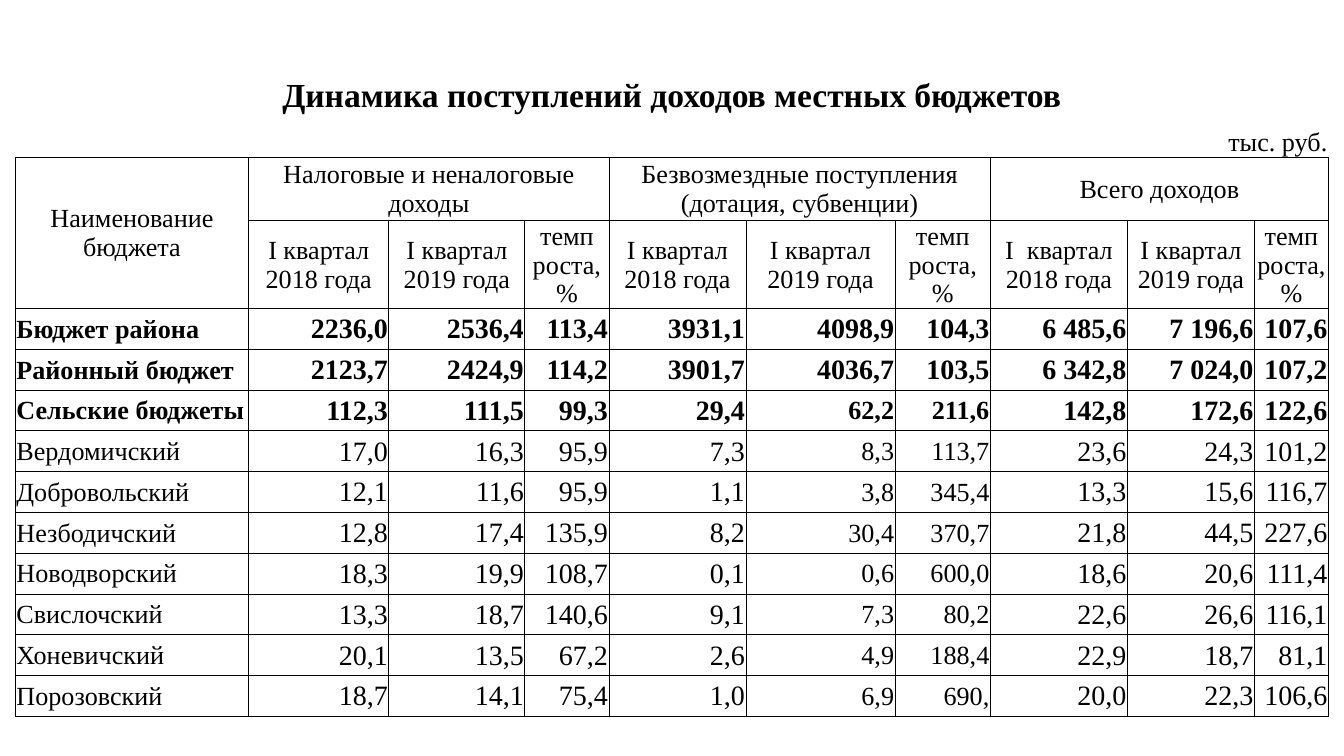
from dataclasses import dataclass
from lxml.etree import SubElement
from pptx import Presentation
from pptx.dml.color import RGBColor
from pptx.enum.text import MSO_ANCHOR, PP_ALIGN
from pptx.oxml.ns import qn
from pptx.util import Cm, Pt


@dataclass(frozen=True)
class Theme:
    font: str = "Times New Roman"
    ink: str = "000000"
    head: int = 18
    base: int = 14
    value: int = 15
    rule: float = 0.5


theme = Theme()
LEFT, MID, RIGHT = PP_ALIGN.LEFT, PP_ALIGN.CENTER, PP_ALIGN.RIGHT


def write(cell, text, size=theme.base, bold=False, align=MID, anchor=MSO_ANCHOR.MIDDLE):
    cell.vertical_anchor = anchor
    frame = cell.text_frame
    frame.text = text
    for para in frame.paragraphs:
        para.alignment = align
        for run in para.runs:
            run.font.name = theme.font
            run.font.size = Pt(size)
            run.font.bold = bold
            run.font.color.rgb = RGBColor.from_string(theme.ink)


def border(cell, drawn):
    props = cell._tc.get_or_add_tcPr()
    for side in "LRTB":
        line = SubElement(props, qn(f"a:ln{side}"), w=str(Pt(theme.rule)))
        if side in drawn:
            fill = SubElement(line, qn("a:solidFill"))
            SubElement(fill, qn("a:srgbClr"), val=theme.ink)
        else:
            SubElement(line, qn("a:noFill"))


deck = Presentation()
deck.slide_width, deck.slide_height = Cm(25.4), Cm(14.28)
slide = deck.slides.add_slide(deck.slide_layouts[6])

widths = [4.41, 2.65, 1.88, 0.69, 1.59, 2.26, 0.33, 2.82, 1.8, 1.85, 0.74, 1.53, 0.87, 1.4]
heights = [0.81] * 2 + [1.2] * 2 + [0.77] * 10
starts = [0, 1, 2, 4, 5, 7, 8, 9, 11, 13]
ends = [start - 1 for start in starts[1:]] + [13]

frame = slide.shapes.add_table(
    len(heights), len(widths), Cm(0.29), Cm(1.35), Cm(sum(widths)), Cm(sum(heights))
)
table = frame.table
table.first_row = table.horz_banding = False
for col, width in zip(table.columns, widths):
    col.width = Cm(width)
for index, (row, height) in enumerate(zip(table.rows, heights)):
    row.height = Cm(height)
    for cell in row.cells:
        cell.margin_left = cell.margin_right = cell.margin_top = Cm(0.02)
        cell.margin_bottom = 0
        border(cell, ["", "B"][index] if index < 2 else "LRTB")
        cell.fill.background()

spans = [(0, 0, 0, 13), (2, 0, 3, 0), (2, 1, 2, 4), (2, 5, 2, 8), (2, 9, 2, 13)]
spans += [(1, first, 1, last) for first, last in [(1, 2), (3, 5), (6, 8), (10, 11), (12, 13)]]
spans += [
    (row, first, row, last)
    for row in range(3, 14)
    for first, last in zip(starts, ends)
    if first < last
]
for top, first, end, last in spans:
    table.cell(top, first).merge(table.cell(end, last))

write(
    table.cell(0, 0), "Динамика поступлений доходов местных бюджетов",
    size=theme.head, bold=True, anchor=MSO_ANCHOR.BOTTOM,
)
write(table.cell(1, 12), "тыс. руб.", align=RIGHT, anchor=MSO_ANCHOR.BOTTOM)

groups = {
    0: "Наименование бюджета",
    1: "Налоговые и неналоговые доходы",
    5: "Безвозмездные поступления (дотация, субвенции)",
    9: "Всего доходов",
}
for col, text in groups.items():
    write(table.cell(2, col), text)

past, now, rate = "I квартал 2018 года", "I квартал\n2019 года", "темп\nроста, %"
heads = [past, now, rate, past, now, rate, "I  квартал\n2018 года", now, rate]
for col, text in zip(starts[1:], heads):
    write(table.cell(3, col), text)

data = [
    ("Бюджет района", "2236,0", "2536,4", "113,4", "3931,1", "4098,9", "104,3", "6 485,6", "7 196,6", "107,6"),
    ("Районный бюджет", "2123,7", "2424,9", "114,2", "3901,7", "4036,7", "103,5", "6 342,8", "7 024,0", "107,2"),
    ("Сельские бюджеты", "112,3", "111,5", "99,3", "29,4", "62,2", "211,6", "142,8", "172,6", "122,6"),
    ("Вердомичский", "17,0", "16,3", "95,9", "7,3", "8,3", "113,7", "23,6", "24,3", "101,2"),
    ("Добровольский", "12,1", "11,6", "95,9", "1,1", "3,8", "345,4", "13,3", "15,6", "116,7"),
    ("Незбодичский", "12,8", "17,4", "135,9", "8,2", "30,4", "370,7", "21,8", "44,5", "227,6"),
    ("Новодворский", "18,3", "19,9", "108,7", "0,1", "0,6", "600,0", "18,6", "20,6", "111,4"),
    ("Свислочский", "13,3", "18,7", "140,6", "9,1", "7,3", "80,2", "22,6", "26,6", "116,1"),
    ("Хоневичский", "20,1", "13,5", "67,2", "2,6", "4,9", "188,4", "22,9", "18,7", "81,1"),
    ("Порозовский", "18,7", "14,1", "75,4", "1,0", "6,9", "690,", "20,0", "22,3", "106,6"),
]
for row, values in enumerate(data):
    for col, text in zip(starts, values):
        small = col == 0 or (row > 1 and col in (7, 8))
        write(
            table.cell(row + 4, col), text,
            size=theme.base if small else theme.value,
            bold=row < 3, align=RIGHT if col else LEFT,
        )

deck.save("out.pptx")
